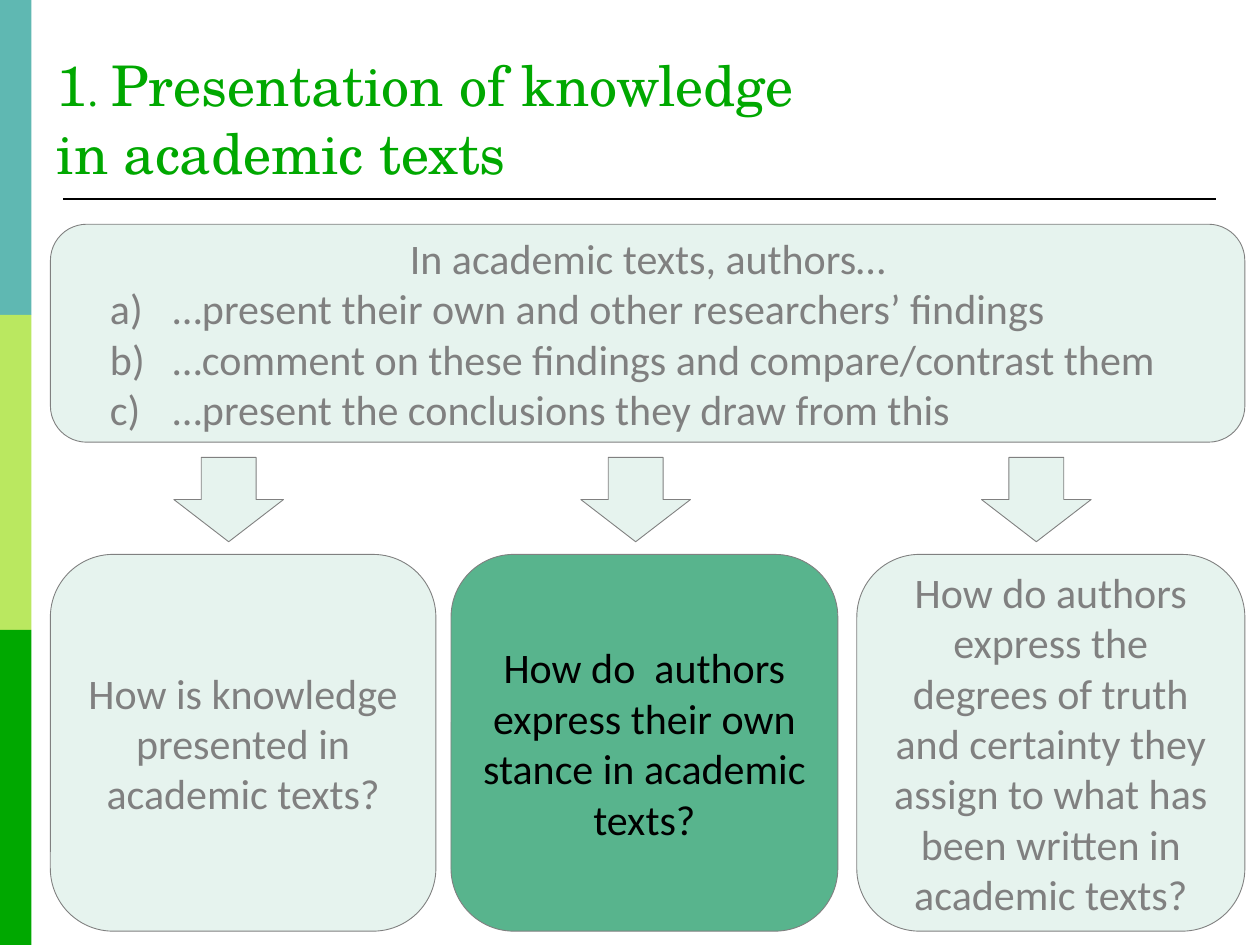
from dataclasses import dataclass

from lxml.etree import SubElement as Sub
from pptx import Presentation
from pptx.dml.color import RGBColor as Color
from pptx.enum.shapes import MSO_CONNECTOR as Link, MSO_SHAPE as Kind
from pptx.enum.text import MSO_ANCHOR as Anchor, PP_ALIGN as Align
from pptx.oxml.ns import qn
from pptx.shapes.autoshape import Shape
from pptx.util import Inches, Pt


@dataclass(frozen=True)
class Theme:
    teal: str = "5FB8B2"
    lime: str = "BAE860"
    green: str = "00A800"
    mint: str = "58B48D"
    gray: str = "808080"
    black: str = "000000"
    serif: str = "TeX Gyre Schola"
    sans: str = "Calibri"
    title: int = 32
    body: int = 24
    faint: int = 15


@dataclass(frozen=True)
class Box:
    left: float
    top: float
    width: float
    height: float


@dataclass(frozen=True)
class Card:
    left: float
    width: float
    arrow: float
    text: str
    active: bool = False


THEME = Theme()
CARDS = [
    Card(0.4, 3.06, 1.48, "How is knowledge presented in academic texts?"),
    Card(3.58, 3.07, 4.71,
         "How do  authors express their own stance in academic texts?", True),
    Card(6.8, 3.08, 7.89,
         "How do authors express the degrees of truth and certainty they "
         "assign to what has been written in academic texts?"),
]
INTRO = "In academic texts, authors…"
STEPS = [
    "…present their own and other researchers’ findings",
    "…comment on these findings and compare/contrast them",
    "…present the conclusions they draw from this",
]


def style(font, face: str, size: int, tint: str) -> None:
    font.name = face
    font.size = Pt(size)
    font.color.rgb = Color.from_string(tint)


def shape(slide, kind, box: Box, tint: str) -> Shape:
    item = slide.shapes.add_shape(kind, Inches(box.left), Inches(box.top),
                                  Inches(box.width), Inches(box.height))
    item.shadow.inherit = False
    item.fill.solid()
    item.fill.fore_color.rgb = Color.from_string(tint)
    item.line.fill.background()
    return item


def panel(slide, kind, box: Box, faint: bool = True) -> Shape:
    item = shape(slide, kind, box, THEME.mint)
    item.line.color.rgb = Color.from_string(THEME.gray)
    item.line.width = Pt(0.5)
    if faint:
        tint = item.fill._xPr.find(".//" + qn("a:srgbClr"))
        Sub(tint, qn("a:alpha"), val=str(THEME.faint * 1000))
    return item


def write(item: Shape, text: str, tint: str) -> None:
    frame = item.text_frame
    frame.word_wrap = True
    frame.vertical_anchor = Anchor.MIDDLE
    para = frame.paragraphs[0]
    para.text = text
    para.alignment = Align.CENTER
    style(para.font, THEME.sans, THEME.body, tint)


def step(item: Shape, text: str) -> None:
    para = item.text_frame.add_paragraph()
    para.text = text
    para.level = 1
    para.alignment = Align.LEFT
    props = para._p.get_or_add_pPr()
    props.set("marL", str(Inches(0.79)))
    props.set("indent", str(Inches(-0.5)))
    Sub(props, qn("a:buFont"), typeface="+mj-lt")
    Sub(props, qn("a:buAutoNum"), type="alphaLcParenR")
    style(para.font, THEME.sans, THEME.body, THEME.gray)


def frame(slide) -> None:
    for row, tint in enumerate((THEME.teal, THEME.lime, THEME.green)):
        shape(slide, Kind.RECTANGLE, Box(0, 2.5 * row, 0.25, 2.5), tint)
    rule = slide.shapes.add_connector(Link.STRAIGHT, Inches(0.5), Inches(1.58),
                                      Inches(9.65), Inches(1.58))
    rule.line.color.rgb = Color.from_string(THEME.black)
    rule.line.width = Pt(1.5)
    Sub(rule._element.spPr, qn("a:effectLst"))


def title(slide) -> None:
    area = slide.shapes.add_textbox(Inches(0.35), Inches(0),
                                    Inches(6.21), Inches(1.52)).text_frame
    area.word_wrap = True
    area.vertical_anchor = Anchor.BOTTOM
    para = area.paragraphs[0]
    for text, size in (("1", THEME.title), (". ", THEME.body),
                       ("Presentation of knowledge in academic texts",
                        THEME.title)):
        run = para.add_run()
        run.text = text
        style(run.font, THEME.serif, size, THEME.green)


def main() -> None:
    deck = Presentation()
    deck.slide_width, deck.slide_height = Inches(10), Inches(7.5)
    slide = deck.slides.add_slide(deck.slide_layouts[6])
    frame(slide)
    title(slide)
    intro = panel(slide, Kind.ROUNDED_RECTANGLE, Box(0.4, 1.78, 9.48, 1.73))
    write(intro, INTRO, THEME.gray)
    for text in STEPS:
        step(intro, text)
    for card in CARDS:
        arrow = panel(slide, Kind.RIGHT_ARROW, Box(card.arrow, 3.53, 0.67, 0.87))
        arrow.rotation = 90
        item = panel(slide, Kind.ROUNDED_RECTANGLE,
                     Box(card.left, 4.4, card.width, 2.99), not card.active)
        write(item, card.text, THEME.black if card.active else THEME.gray)
    deck.save("out.pptx")


if __name__ == "__main__":
    main()
